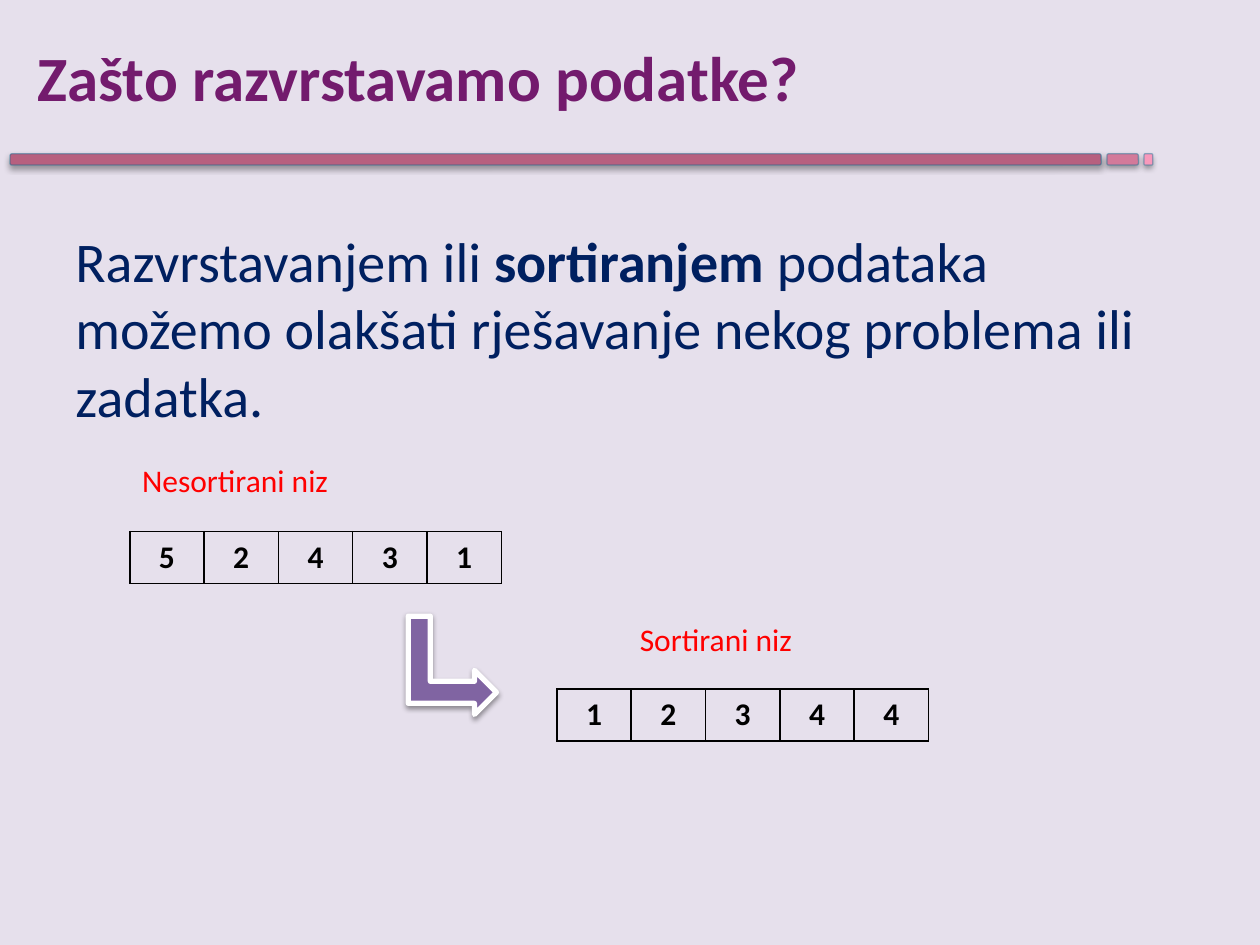
from lxml.etree import SubElement
from pptx import Presentation
from pptx.dml.color import RGBColor
from pptx.enum.shapes import MSO_SHAPE
from pptx.enum.text import MSO_ANCHOR, PP_ALIGN
from pptx.oxml.ns import qn
from pptx.util import Inches, Pt

COLORS = {
    "background": "E6E0EC", "title": "731B6D", "body": "002060",
    "label": "FF0000", "black": "000000", "white": "FFFFFF",
    "arrow": "8064A2", "bar outline": "006C93",
}

presentation = Presentation()
presentation.slide_width, presentation.slide_height = Inches(10), Inches(7.5)
column = presentation.slide_width / 100
row = presentation.slide_height / 75
slide = presentation.slides.add_slide(presentation.slide_layouts[6])
slide.background.fill.solid()
slide.background.fill.fore_color.rgb = RGBColor.from_string(COLORS["background"])


def write(paragraph, text, size, color, bold=False):
    run = paragraph.add_run()
    run.text = text
    settings = {"name": "Calibri", "size": Pt(size), "bold": bold}
    for name, value in settings.items():
        setattr(run.font, name, value)
    run.font.color.rgb = RGBColor.from_string(COLORS[color])


def add_shaded_shape(kind, box, fill, outline, width, shadow_alpha, distance):
    left, top, wide, high = box
    shape = slide.shapes.add_shape(
        kind, int(left * column), int(top * row), int(wide * column), int(high * row))
    shape.fill.solid()
    shape.fill.fore_color.rgb = RGBColor.from_string(fill)
    shape.line.width = Pt(width)
    shape.line.color.rgb = RGBColor.from_string(COLORS[outline])
    shape.shadow.inherit = False
    effects = shape._element.spPr.find(qn("a:effectLst"))
    shadow = SubElement(effects, qn("a:outerShdw"), blurRad=str(Pt(3.1)),
                        dist=str(Pt(distance)), dir="5400000", rotWithShape="0")
    shade = SubElement(shadow, qn("a:srgbClr"), val=COLORS["black"])
    SubElement(shade, qn("a:alpha"), val=str(shadow_alpha * 1000))
    return shape


bar_left = 0.8
for bar_width, bar_color in ((86.6, "B7607F"), (2.5, "D37A9A"), (0.7, "F899BB")):
    bar = add_shaded_shape(MSO_SHAPE.ROUNDED_RECTANGLE, (bar_left, 12.2, bar_width, 0.9),
                           bar_color, "bar outline", 0.75, 35, 1.8)
    outline_color = bar._element.spPr.find(qn("a:ln")).find(".//" + qn("a:srgbClr"))
    SubElement(outline_color, qn("a:alpha"), val="40000")
    bar_left += bar_width + 0.45

arrow = add_shaded_shape(MSO_SHAPE.BENT_UP_ARROW, (32, 49.3, 7.8, 7),
                         COLORS["arrow"], "white", 3, 38, 1.6)
arrow.rotation = 90

texts = [
    ((2, 2.6, 90, 10.1), 36, "title", [("Zašto razvrstavamo podatke?", True)]),
    ((5, 17.5, 90, 49.5), 32, "body", [
        ("Razvrstavanjem ili ", False), ("sortiranjem", True),
        (" podataka možemo olakšati rješavanje nekog problema ili zadatka.", False)]),
    ((10.3, 36.1, 27.7, 4), 18, "label", [("Nesortirani niz", False)]),
    ((49.8, 48.7, 27.7, 4), 18, "label", [("Sortirani niz", False)]),
]
for (left, top, wide, high), size, color, runs in texts:
    text_box = slide.shapes.add_textbox(
        int(left * column), int(top * row), int(wide * column), int(high * row))
    text_box.text_frame.word_wrap = True
    for text, bold in runs:
        write(text_box.text_frame.paragraphs[0], text, size, color, bold)

for left, top, digits in ((10.3, 42.2, "52431"), (44.2, 54.7, "12344")):
    table = slide.shapes.add_table(
        1, len(digits), int(left * column), int(top * row),
        int(5.9 * column) * len(digits), int(4.1 * row)).table
    table.first_row = table.horz_banding = False
    for cell, digit in zip(table.iter_cells(), digits):
        properties = cell._tc.get_or_add_tcPr()
        for side in ("lnL", "lnR", "lnT", "lnB"):
            border = SubElement(properties, qn(f"a:{side}"), w=str(Pt(1)))
            border_fill = SubElement(border, qn("a:solidFill"))
            SubElement(border_fill, qn("a:srgbClr"), val=COLORS["black"])
        cell.fill.background()
        cell.vertical_anchor = MSO_ANCHOR.MIDDLE
        paragraph = cell.text_frame.paragraphs[0]
        paragraph.alignment = PP_ALIGN.CENTER
        write(paragraph, digit, 18, "black", True)

presentation.save("out.pptx")
